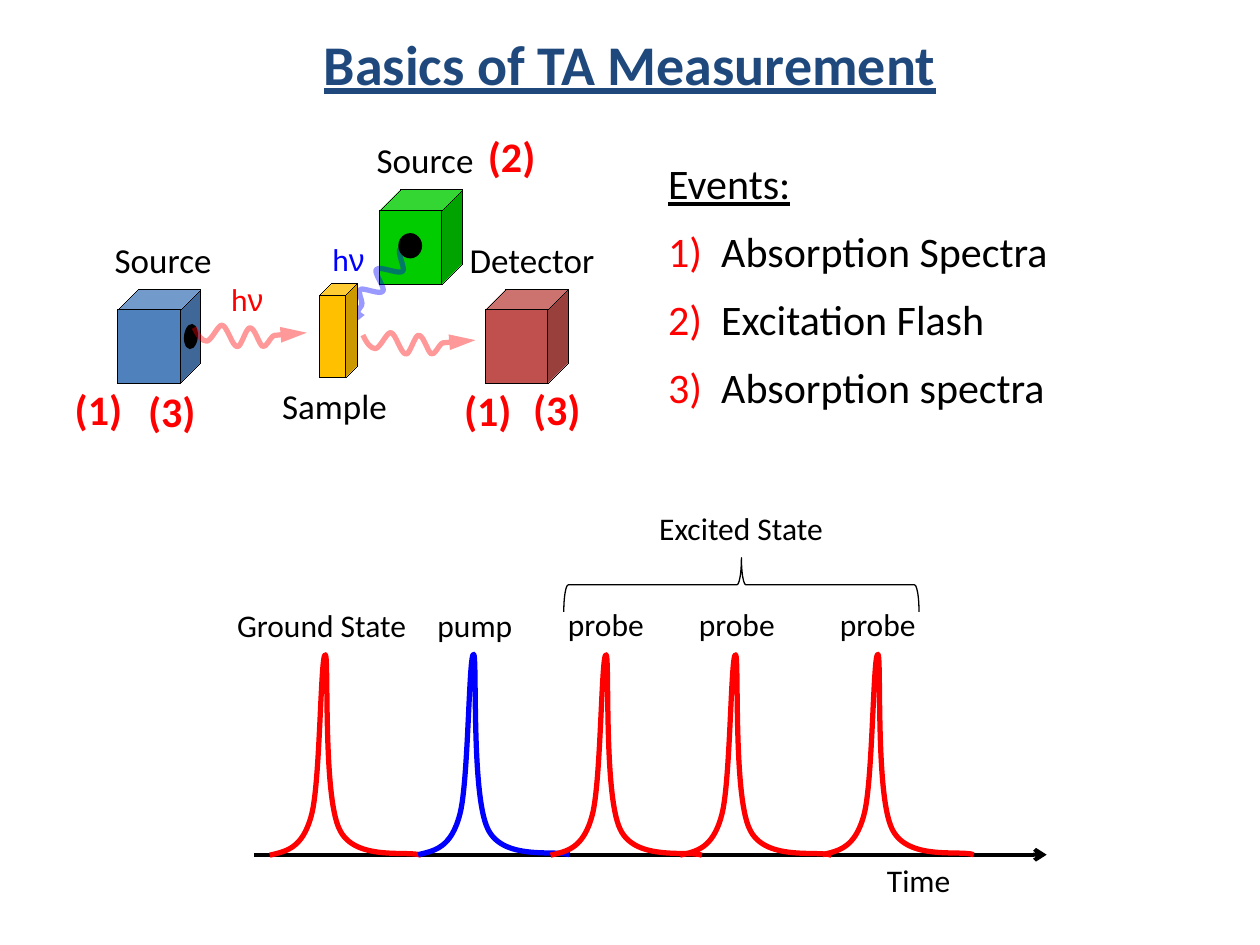
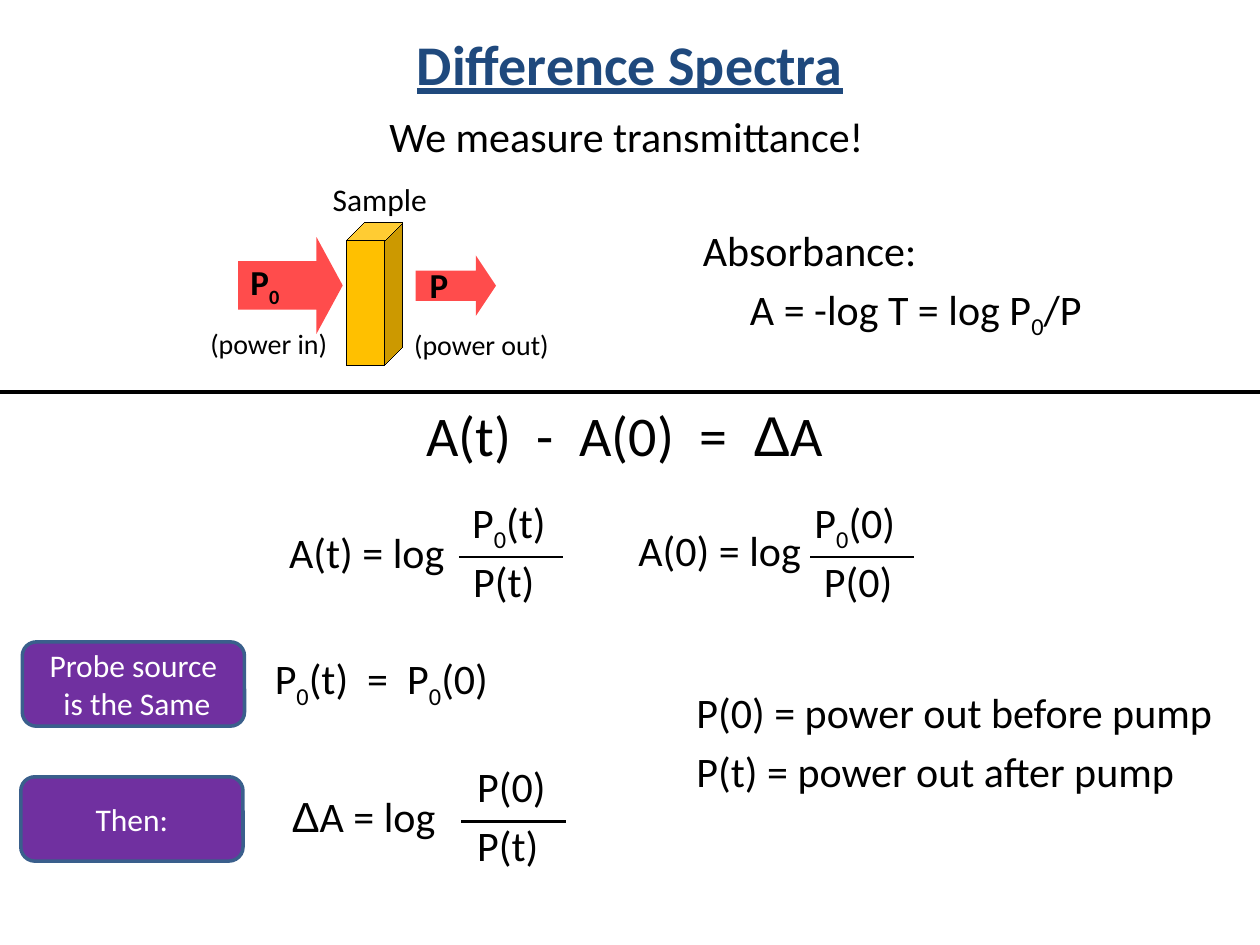
from itertools import groupby
from lxml.etree import SubElement
from pptx import Presentation
from pptx.dml.color import RGBColor
from pptx.enum.shapes import MSO_CONNECTOR, MSO_SHAPE
from pptx.enum.text import MSO_ANCHOR, PP_ALIGN
from pptx.oxml.ns import qn
from pptx.util import Cm, Pt

COLOURS = {
    "black": "000000", "white": "FFFFFF", "title": "1F497D",
    "probe": "FF0000", "pump": "0000FF", "flash": "00CC00",
    "lamp": "4F81BD", "detector": "C0504D", "sample": "FFC000",
    "step": "7030A0", "step edge": "3A5F8C",
}
PAINT = {name: RGBColor.from_string(value) for name, value in COLOURS.items()}
CENTER = PP_ALIGN.CENTER
HAIRLINE = 0.01


def add(page, area, kind=None, fill=None, line=None, width=HAIRLINE):
    """Add a preset shape, or a text box when no kind is given; area is in cm."""
    area = [Cm(length) for length in area]
    if kind is None:
        return page.shapes.add_textbox(*area)
    shape = page.shapes.add_shape(kind, *area)
    shape.shadow.inherit = False
    if fill:
        shape.fill.solid()
        shape.fill.fore_color.rgb = PAINT[fill]
    else:
        shape.fill.background()
    if line:
        shape.line.color.rgb = PAINT[line]
        shape.line.width = Pt(width)
    else:
        shape.line.fill.background()
    return shape


def write(shape, text, size=18, colour="black", align=PP_ALIGN.LEFT, bold=False):
    """Fill a shape with lines of text; underscores enclose a subscript."""
    frame = shape.text_frame
    frame.word_wrap = True
    for number, line in enumerate(text.split("\n")):
        para = frame.add_paragraph() if number else frame.paragraphs[0]
        para.alignment = align
        para.font.name = "Calibri"
        para.font.size = Pt(size)
        para.font.bold = bold
        para.font.color.rgb = PAINT[colour]
        for index, piece in enumerate(line.split("_")):
            for greek, letters in groupby(piece, key=lambda letter: letter in "νΔ"):
                span = para.add_run()
                span.text = "".join(letters)
                if greek:
                    span.font.name = "Arial"
                if index % 2:
                    span.font._element.set("baseline", "-25000")
    return frame


deck = Presentation()
deck.slide_width, deck.slide_height = Cm(25.4), Cm(19.05)
blank = deck.slide_layouts[6]
setup, spectra = deck.slides.add_slide(blank), deck.slides.add_slide(blank)

for page, title in [(setup, "Basics of TA Measurement"), (spectra, "Difference Spectra")]:
    frame = write(add(page, (1.27, 0, 22.86, 2.54)), title, 32, "title", CENTER, True)
    frame.vertical_anchor = MSO_ANCHOR.MIDDLE
    frame.paragraphs[0].font.underline = True

# Time axis, divider and fraction bars
for page, left, right, y, width in [
    (setup, 5.13, 21.1, 17.23, 2.25),
    (spectra, 0, 25.4, 7.9, 2.25),
    (spectra, 9.25, 11.35, 11.23, 1.5),
    (spectra, 16.33, 18.43, 11.23, 1.5),
    (spectra, 9.3, 11.4, 16.56, 1.5),
]:
    rule = page.shapes.add_connector(
        MSO_CONNECTOR.STRAIGHT, Cm(left), Cm(y), Cm(right), Cm(y))
    rule.line.color.rgb = PAINT["black"]
    rule.line.width = Pt(width)
    SubElement(rule._element.spPr, qn("a:effectLst"))
    if page is setup:
        SubElement(rule.line._ln, qn("a:tailEnd"), type="arrow")

# Slide 1: light sources and detector
for area, fill in [
    ((7.65, 3.83, 1.68, 1.9), "flash"),
    ((9.78, 5.83, 1.68, 1.9), "detector"),
    ((2.37, 5.83, 1.68, 1.9), "lamp"),
]:
    add(setup, area, MSO_SHAPE.CUBE, fill, "black")
add(setup, (3.71, 6.53, 0.28, 0.51), MSO_SHAPE.OVAL, "black").rotation = 5.7

# Bezier points in cm: a start, then three points for each stretch
WAVE = [
    (1.12, -0.22), (1.12, -0.22), (0.69, -0.15), (0.56, -0.12),
    (0.44, -0.1), (0.49, -0.11), (0.44, -0.08),
    (0.39, -0.03), (0.33, 0.16), (0.26, 0.14),
    (0.18, 0.1), (0.07, -0.22), (-0.03, -0.21),
    (-0.11, -0.21), (-0.17, 0.21), (-0.25, 0.19),
    (-0.35, 0.2), (-0.49, -0.2), (-0.59, -0.21),
    (-0.67, -0.23), (-0.77, 0.11), (-0.87, 0.14),
    (-0.97, 0.15), (-1.06, 0.04), (-1.15, -0.11),
]
PULSE = [
    (0, 0), (0.33, -0.08), (0.66, -0.13), (0.84, -0.81),
    (1.02, -1.47), (1.02, -4.09), (1.12, -4.04),
    (1.19, -3.99), (1.07, -1.22), (1.4, -0.53),
    (1.7, 0.13), (2.77, -0.1), (3.05, 0),
]
for points, x, y, colour, angle in [
    (WAVE, 7.58, 5.75, "pump", 134.6),
    (WAVE, 8.45, 6.97, "probe", 5.4),
    (WAVE, 5.05, 6.82, "probe", 5.4),
    (PULSE, 5.44, 17.24, "probe", 0),
    (PULSE, 8.43, 17.23, "pump", 0),
    (PULSE, 11.1, 17.24, "probe", 0),
    (PULSE, 13.71, 17.24, "probe", 0),
    (PULSE, 16.58, 17.23, "probe", 0),
]:
    start, *rest = [(Cm(x + dx), Cm(y + dy)) for dx, dy in points]
    builder = setup.shapes.build_freeform(*start)
    builder.add_line_segments(rest, close=False)
    curve = builder.convert_to_shape()
    outline = next(curve._element.iter(qn("a:path")))
    corners = outline.findall(qn("a:lnTo"))
    for first in range(0, len(corners), 3):
        bend = SubElement(outline, qn("a:cubicBezTo"))
        for corner in corners[first:first + 3]:
            bend.append(corner[0])
            outline.remove(corner)
    curve.shadow.inherit = False
    curve.fill.background()
    curve.line.color.rgb = PAINT[colour]
    curve.line.width = Pt(3)
    curve.rotation = angle
    if points is WAVE:
        SubElement(next(curve.line._ln.iter(qn("a:srgbClr"))), qn("a:alpha"), val="40000")
        SubElement(curve.line._ln, qn("a:headEnd"), type="triangle", w="med", len="lg")

add(setup, (8.03, 4.7, 0.48, 0.51), MSO_SHAPE.OVAL, "black")
sample = add(setup, (6.44, 5.71, 0.76, 1.91), MSO_SHAPE.CUBE, "sample", "black")
sample.adjustments[0] = 0.316
brace = add(setup, (14.4, 8.21, 1.09, 7.16), MSO_SHAPE.LEFT_BRACE, None, "black", 0.75)
brace.rotation = 90

for text, x, y, width in [
    ("Source", 7.15, 2.67, 2.84), ("Source", 1.87, 4.68, 2.84),
    ("Sample", 5.07, 7.62, 3.35), ("Detector", 8.78, 4.68, 3.89),
]:
    write(add(setup, (x, y, width, 1.12)), text, 20, align=CENTER)
for text, x, y in [
    ("(1)", 1.02, 7.6), ("(2)", 9.35, 2.5), ("(3)", 2.5, 7.64),
    ("(1)", 8.87, 7.62), ("(3)", 10.26, 7.6),
]:
    write(add(setup, (x, y, 1.93, 1.6)), text, 24, "probe", CENTER, True)
for text, x, y, width, colour in [
    ("hν", 6.45, 4.71, 1.27, "pump"), ("hν", 4.41, 5.52, 1.47, "probe"),
    ("Ground State", 4.53, 12.09, 4.05, "black"), ("pump", 8.57, 12.09, 2.1, "black"),
    ("probe", 11.2, 12.07, 2.1, "black"), ("probe", 13.84, 12.07, 2.1, "black"),
    ("probe", 16.68, 12.07, 2.1, "black"), ("Time", 17.63, 17.23, 2.84, "black"),
]:
    write(add(setup, (x, y, width, 1.02)), text, 18, colour)
write(add(setup, (12.99, 10.13, 3.9, 1.02)), "Excited State", align=CENTER)

events = write(add(setup, (13.22, 3.05, 13.26, 5.44)), "Events:\n1)\n2)\n3)", 24, "probe")
heading, *items = events.paragraphs
heading.font.color.rgb = PAINT["black"]
heading.font.underline = True
for para in events.paragraphs:
    para.space_after = Pt(10)
for para, event in zip(items, ["Absorption Spectra", "Excitation Flash", "Absorption spectra"]):
    span = para.add_run()
    span.text = "\t" + event
    span.font.color.rgb = PAINT["black"]
    properties = para._p.get_or_add_pPr()
    properties.set("marL", str(Cm(1.07)))
    properties.set("indent", str(Cm(-1.07)))

# Slide 2: light through the sample
for area, head in [((4.8, 4.78, 2.11, 1.95), 0.271), ((8.38, 5.15, 1.62, 1.22), 0.333)]:
    arrow = add(spectra, area, MSO_SHAPE.RIGHT_ARROW, "probe")
    arrow.adjustments[1] = head
    SubElement(next(arrow._element.spPr.iter(qn("a:srgbClr"))), qn("a:alpha"), val="70000")
sample = add(spectra, (6.98, 4.49, 1.14, 2.87), MSO_SHAPE.CUBE, "sample", "black")
sample.adjustments[0] = 0.316
for text, x, y, width, size, bold in [
    ("P_0_", 4.8, 5.13, 1.2, 20, True), ("P", 8.41, 5.18, 0.95, 20, True),
    ("(power in)", 3.99, 6.45, 2.95, 16, False),
    ("(power out)", 8.1, 6.48, 3.35, 16, False),
]:
    write(add(spectra, (x, y, width, 0.94)), text, size, bold=bold)
for text, area, size in [
    ("Sample", (6.37, 3.51, 2.57, 1.02), 18),
    ("We measure transmittance!", (2.75, 2.11, 19.76, 1.27), 24),
    ("A(t)  -  A(0)  =  ΔA", (7.44, 7.95, 10.31, 1.63), 32),
]:
    write(add(spectra, area), text, size, align=CENTER)

# Equations
for text, x, y, width in [
    ("A(t) = log", 5.58, 10.49, 4.3), ("P_0_(t)", 9.27, 9.88, 2.1), ("P(t)", 9.29, 11.07, 1.8),
    ("A(0) = log", 12.62, 10.45, 4.3), ("P_0_(0)", 16.17, 9.88, 2.25),
    ("P(0)", 16.36, 11.07, 1.95),
    ("P_0_(t)  =  P_0_(0)", 5.29, 13.03, 5),
    ("ΔA = log", 5.63, 15.82, 4.3), ("P(0)", 9.37, 15.21, 1.95), ("P(t)", 9.37, 16.39, 1.8),
]:
    write(add(spectra, (x, y, width, 1.27)), text, 24)
absorbance = write(add(spectra, (13.92, 4.4, 9.94, 2.97)),
                   "Absorbance:\nA = -log T = log P_0_/P", 24)
absorbance.paragraphs[1]._p.get_or_add_pPr().set("marL", str(Cm(0.95)))
powers = write(add(spectra, (13.79, 13.72, 11.61, 2.51)),
               "P(0) = power out before pump\nP(t) = power out after pump", 24)
for frame in (absorbance, powers):
    frame.paragraphs[1].space_before = Pt(4.8)

for text, x, y in [("Probe source\n is the Same", 0.45, 12.94), ("Then:", 0.42, 15.66)]:
    step = add(spectra, (x, y, 4.48, 1.7), MSO_SHAPE.ROUNDED_RECTANGLE, "step", "step edge", 2)
    write(step, text, 18, "white", CENTER).vertical_anchor = MSO_ANCHOR.MIDDLE

deck.save("out.pptx")
